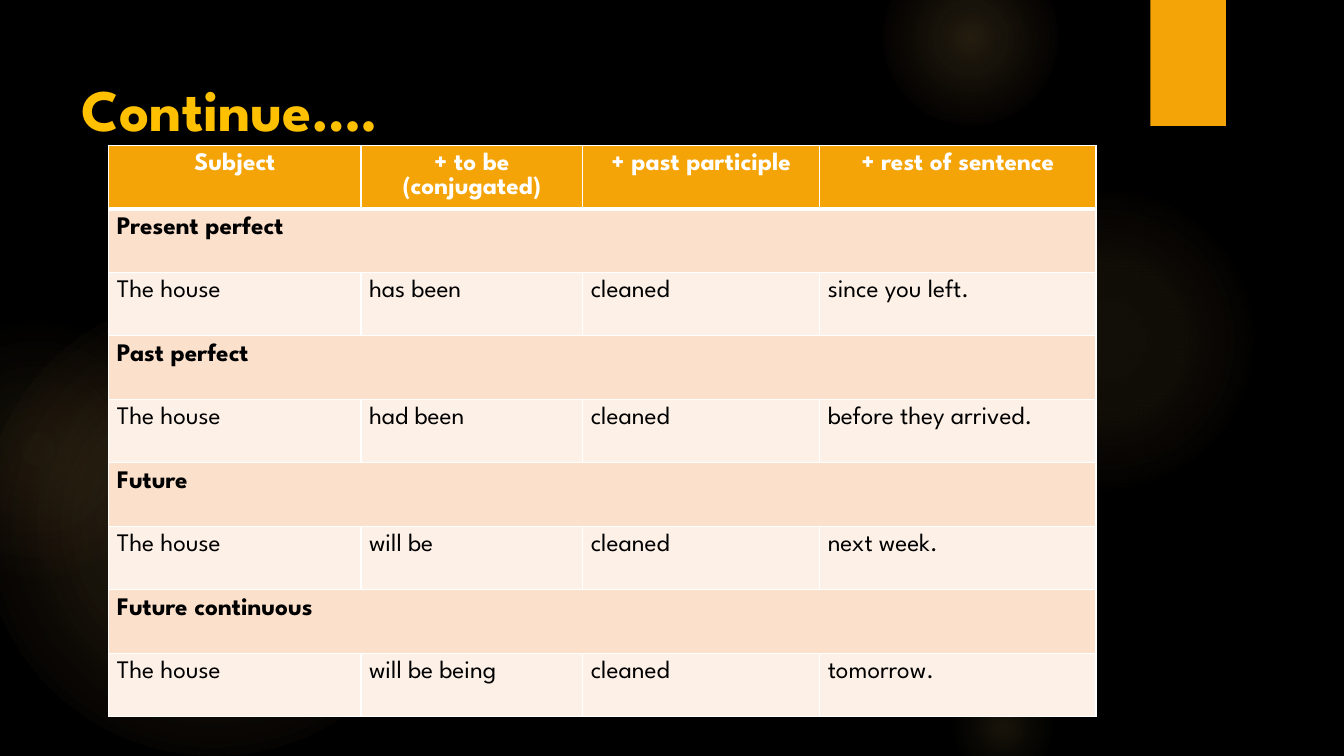
from lxml import etree
from pptx import Presentation
from pptx.dml.color import RGBColor
from pptx.enum.shapes import MSO_SHAPE as Shape
from pptx.enum.text import MSO_ANCHOR as Anchor, PP_ALIGN as Align
from pptx.oxml import parse_xml
from pptx.oxml.ns import nsdecls, qn
from pptx.util import Inches, Pt

# Content
TITLE = "Continue…."
HEADINGS = ["Subject", "+ to be (conjugated)", "+ past participle", "+ rest of sentence"]
TENSES = [
    ("Present perfect", ["The house", "has been", "cleaned", "since you left."]),
    ("Past perfect", ["The house", "had been", "cleaned", "before they arrived."]),
    ("Future", ["The house", "will be", "cleaned", "next week."]),
    ("Future continuous", ["The house", "will be being", "cleaned", "tomorrow."]),
]
COLUMN_WIDTHS = [2.5, 2.2, 2.35, 2.74]
ROW_HEIGHT = 0.63

# Background glows: left, top, diameter, stops of (position %, colour, opacity %)
GLOWS = [
    (-0.17, 2.92, 4.58, [(0, "FAC96A", 11), (36, "FAC96A", 10), (75, "FAC96A", 0)]),
    (-0.92, 3.17, 2.58, [(0, "FAC96A", 8), (36, "FAC96A", 5), (71, "F59B74", 0)]),
    (9.41, 1.83, 3.08, [(0, "FAC96A", 7), (36, "FAC96A", 6), (69, "FAC96A", 0)]),
    (8.75, -0.5, 1.75, [(0, "FAC96A", 14), (36, "FAC96A", 7), (73, "FAC96A", 0)]),
    (9.41, 6.67, 1.08, [(0, "FAC96A", 10), (31, "FAC96A", 5), (66, "FAC96A", 0)]),
]

FONT = "League Spartan"
BLACK = RGBColor(0, 0, 0)
WHITE = RGBColor(255, 255, 255)
ORANGE = RGBColor(0xF5, 0xA4, 0x08)
GOLD = RGBColor(0xFF, 0xC0, 0x00)
PEACH = RGBColor(0xFB, 0xE0, 0xCC)
CREAM = RGBColor(0xFD, 0xF0, 0xE7)


def set_font(para, size, color, bold):
    font = para.font
    font.name, font.size, font.bold = FONT, Pt(size), bold
    font.color.rgb = color


def add_plain_shape(page, kind, left, top, width, height):
    shape = page.shapes.add_shape(kind, Inches(left), Inches(top), Inches(width), Inches(height))
    shape.shadow.inherit = False
    shape.line.fill.background()
    return shape


def add_glow(page, left, top, diameter, stops):
    glow = add_plain_shape(page, Shape.OVAL, left, top, diameter, diameter)
    stop_xml = "".join(
        f'<a:gs pos="{position * 1000}"><a:srgbClr val="{color}">'
        f'<a:alpha val="{opacity * 1000}"/></a:srgbClr></a:gs>'
        for position, color, opacity in stops)
    gradient = parse_xml(
        f'<a:gradFill {nsdecls("a")} rotWithShape="1"><a:gsLst>{stop_xml}</a:gsLst>'
        '<a:path path="circle"><a:fillToRect l="50000" t="50000" r="50000" b="50000"/>'
        '</a:path></a:gradFill>')
    glow._element.spPr.find(qn("a:prstGeom")).addnext(gradient)


def set_borders(cell, bottom, top):
    properties = cell._tc.get_or_add_tcPr()
    sides = [("lnL", 1), ("lnR", 1), ("lnT", top), ("lnB", bottom)]
    for index, (side, width) in enumerate(sides):
        line = etree.Element(qn(f"a:{side}"), w=str(Pt(width)))
        fill = etree.SubElement(line, qn("a:solidFill"))
        etree.SubElement(fill, qn("a:srgbClr"), val=str(WHITE))
        properties.insert(index, line)


def fill_row(table, row, texts, fill, color, bold, align):
    for column in range(len(COLUMN_WIDTHS)):
        cell = table.cell(row, column)
        cell.margin_left = cell.margin_right = Inches(0.08)
        cell.margin_top = cell.margin_bottom = Inches(0.08)
        cell.fill.solid()
        cell.fill.fore_color.rgb = fill
        set_borders(cell, bottom=3 if row == 0 else 1, top=3 if row == 1 else 1)
        if column < len(texts):
            cell.text = texts[column]
            para = cell.text_frame.paragraphs[0]
            para.alignment = align
            set_font(para, 18, color, bold)


def main():
    deck = Presentation()
    deck.slide_width, deck.slide_height = Inches(13.33), Inches(7.5)
    page = deck.slides.add_slide(deck.slide_layouts[5])
    page.background.fill.solid()
    page.background.fill.fore_color.rgb = BLACK

    # Glows and corner tab
    for glow in GLOWS:
        add_glow(page, *glow)
    tab = add_plain_shape(page, Shape.RECTANGLE, 11.41, 0, 0.75, 1.25)
    tab.fill.solid()
    tab.fill.fore_color.rgb = ORANGE

    # Title
    title = page.shapes.title
    title.left, title.top = Inches(0.71), Inches(0.5)
    title.width, title.height = Inches(10.29), Inches(1.53)
    title.text = TITLE
    frame = title.text_frame
    frame.vertical_anchor = Anchor.TOP
    frame.margin_top = Inches(0.22)
    frame.paragraphs[0].alignment = Align.LEFT
    set_font(frame.paragraphs[0], 42, GOLD, True)

    # Table: a heading row, then a tense row and an example row per tense
    row_count = 1 + 2 * len(TENSES)
    table = page.shapes.add_table(
        row_count, len(COLUMN_WIDTHS), Inches(1.08), Inches(1.44),
        Inches(sum(COLUMN_WIDTHS)), Inches(ROW_HEIGHT * row_count)).table
    for column, width in zip(table.columns, COLUMN_WIDTHS):
        column.width = Inches(width)
    for row in table.rows:
        row.height = Inches(ROW_HEIGHT)

    fill_row(table, 0, HEADINGS, ORANGE, WHITE, True, Align.CENTER)
    for index, (tense, example) in enumerate(TENSES):
        row = 1 + 2 * index
        fill_row(table, row, [tense], PEACH, BLACK, True, Align.LEFT)
        table.cell(row, 0).merge(table.cell(row, len(COLUMN_WIDTHS) - 1))
        fill_row(table, row + 1, example, CREAM, BLACK, False, Align.LEFT)

    deck.save("out.pptx")


if __name__ == "__main__":
    main()
